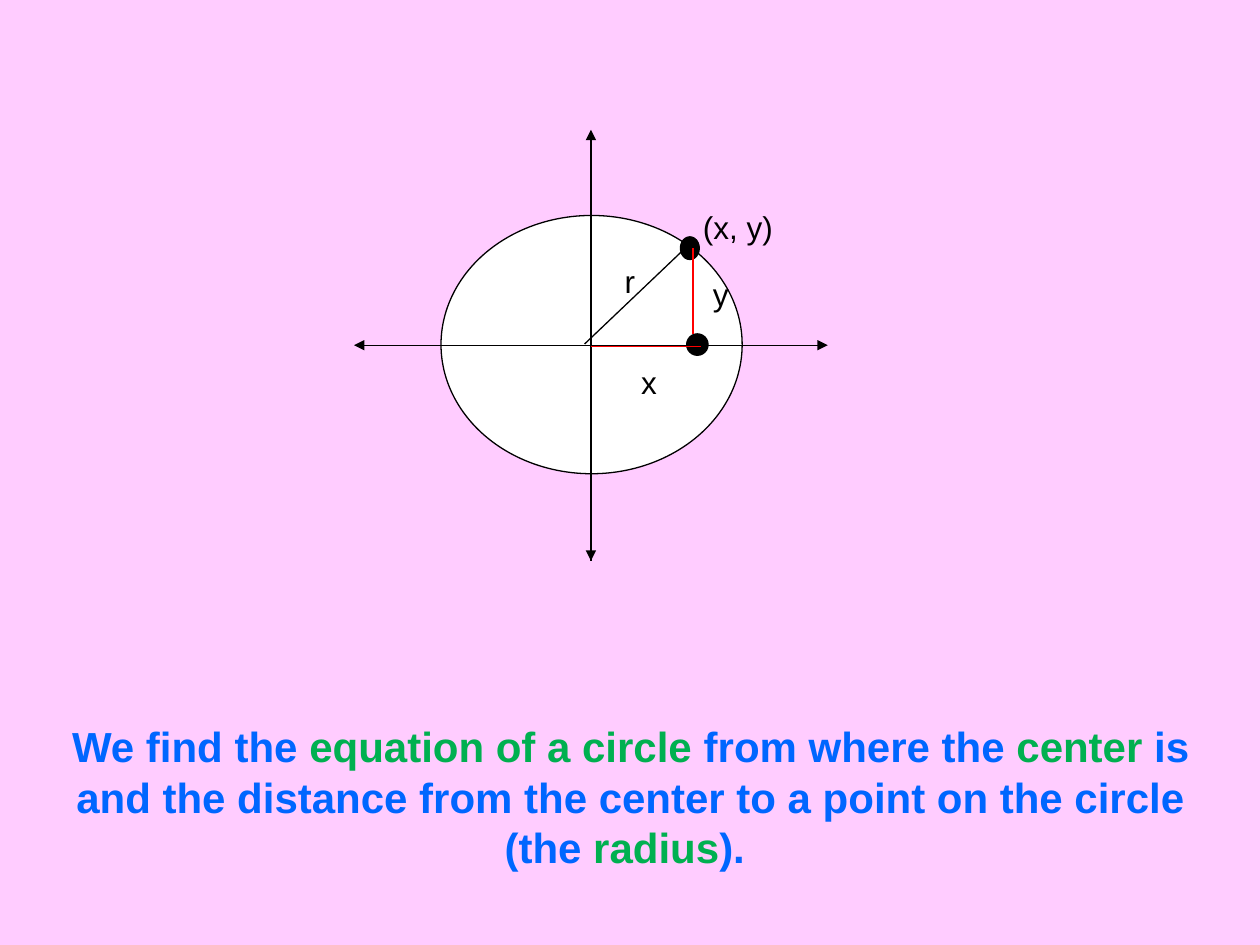
from typing import NamedTuple

from lxml.etree import SubElement
from pptx import Presentation
from pptx.dml.color import RGBColor
from pptx.enum.shapes import MSO_CONNECTOR as Connector, MSO_SHAPE as Shape
from pptx.enum.text import MSO_AUTO_SIZE as AutoSize, PP_ALIGN as Align
from pptx.oxml.ns import qn
from pptx.util import Inches, Pt

BLACK, WHITE, RED = "000000", "FFFFFF", "FF0000"
BLUE, GREEN, PINK = "0066FF", "00B050", "FFCCFF"
FONT = "Arial"
LINE_WIDTH = 0.75
CENTER_X, CENTER_Y = 4.69, 2.74


class Segment(NamedTuple):
    x1: float
    y1: float
    x2: float
    y2: float
    color: str = BLACK
    arrow: bool = False


class Oval(NamedTuple):
    left: float
    top: float
    width: float
    height: float
    fill: str = BLACK
    preset: Shape = Shape.FLOWCHART_CONNECTOR


class Label(NamedTuple):
    text: str
    left: float
    top: float
    width: float


ARROWS = [
    Segment(CENTER_X, 4.45, CENTER_X, 1.03, arrow=True),
    Segment(CENTER_X, 1.88, CENTER_X, 4.45, arrow=True),
    Segment(3.15, CENTER_Y, 6.57, CENTER_Y, arrow=True),
    Segment(CENTER_X, CENTER_Y, 2.81, CENTER_Y, arrow=True),
]
CIRCLE = Oval(3.5, 1.71, 2.39, 2.05, WHITE, Shape.OVAL)
INNER_AXES = [
    Segment(CENTER_X, 3.31, CENTER_X, 1.6),
    Segment(3.67, CENTER_Y, 5.89, CENTER_Y),
    Segment(CENTER_X, 3.25, CENTER_X, 3.94),
    Segment(3.67, CENTER_Y, 3.32, CENTER_Y),
]
RADIUS = Segment(4.64, 2.73, 5.48, 1.93)
POINTS = [Oval(5.4, 1.88, 0.15, 0.18), Oval(5.45, 2.65, 0.17, 0.17)]
LEGS = [
    Segment(5.5, 1.97, 5.5, 2.65, RED),
    Segment(5.56, 2.75, CENTER_X, 2.75, RED),
]
LABELS = [
    Label("(x, y)", 5.48, 1.6, 0.92),
    Label("r", 4.86, 2.03, 0.33),
    Label("y", 5.56, 2.13, 0.33),
    Label("x", 4.99, 2.83, 0.42),
]
STATEMENT = [
    ("We find the ", BLUE),
    ("equation of a circle ", GREEN),
    ("from where the ", BLUE),
    ("center", GREEN),
    (" is and the distance from the center to a point on the circle (the ", BLUE),
    ("radius", GREEN),
    ("). ", BLUE),
]


def set_color(color_format, color: str) -> None:
    color_format.rgb = RGBColor.from_string(color)


def draw_segment(slide, segment: Segment) -> None:
    ends = map(Inches, segment[:4])
    connector = slide.shapes.add_connector(Connector.STRAIGHT, *ends)
    connector.line.width = Pt(LINE_WIDTH)
    connector.line.fill.solid()
    set_color(connector.line.color, segment.color)
    if segment.arrow:
        SubElement(connector.line._get_or_add_ln(), qn("a:tailEnd"), type="triangle")
    SubElement(connector._element.spPr, qn("a:effectLst"))


def draw_oval(slide, oval: Oval) -> None:
    shape = slide.shapes.add_shape(oval.preset, *map(Inches, oval[:4]))
    shape.shadow.inherit = False
    shape.fill.solid()
    set_color(shape.fill.fore_color, oval.fill)
    shape.line.width = Pt(LINE_WIDTH)
    set_color(shape.line.color, BLACK)


def add_text_frame(slide, left: float, top: float, width: float, height: float):
    box = slide.shapes.add_textbox(*map(Inches, (left, top, width, height)))
    text_frame = box.text_frame
    text_frame.word_wrap = True
    text_frame.auto_size = AutoSize.SHAPE_TO_FIT_TEXT
    return text_frame


def format_font(font, size: int, color: str, bold: bool = False) -> None:
    font.name = FONT
    font.size = Pt(size)
    font.bold = bold
    set_color(font.color, color)


def draw_label(slide, label: Label) -> None:
    text_frame = add_text_frame(slide, label.left, label.top, label.width, 0.4)
    text_frame.text = label.text
    format_font(text_frame.paragraphs[0].runs[0].font, 18, BLACK)


def draw_statement(slide) -> None:
    paragraph = add_text_frame(slide, 0.42, 5.67, 9.17, 1.31).paragraphs[0]
    paragraph.alignment = Align.CENTER
    for text, color in STATEMENT:
        run = paragraph.add_run()
        run.text = text
        format_font(run.font, 24, color, bold=True)


def main() -> None:
    presentation = Presentation()
    presentation.slide_width = Inches(10)
    presentation.slide_height = Inches(7.5)
    slide = presentation.slides.add_slide(presentation.slide_layouts[6])
    slide.background.fill.solid()
    set_color(slide.background.fill.fore_color, PINK)

    for arrow in ARROWS:
        draw_segment(slide, arrow)
    draw_oval(slide, CIRCLE)
    for segment in [*INNER_AXES, RADIUS]:
        draw_segment(slide, segment)
    for point in POINTS:
        draw_oval(slide, point)
    for label in LABELS:
        draw_label(slide, label)
    draw_statement(slide)
    for leg in LEGS:
        draw_segment(slide, leg)

    presentation.save("out.pptx")


if __name__ == "__main__":
    main()
